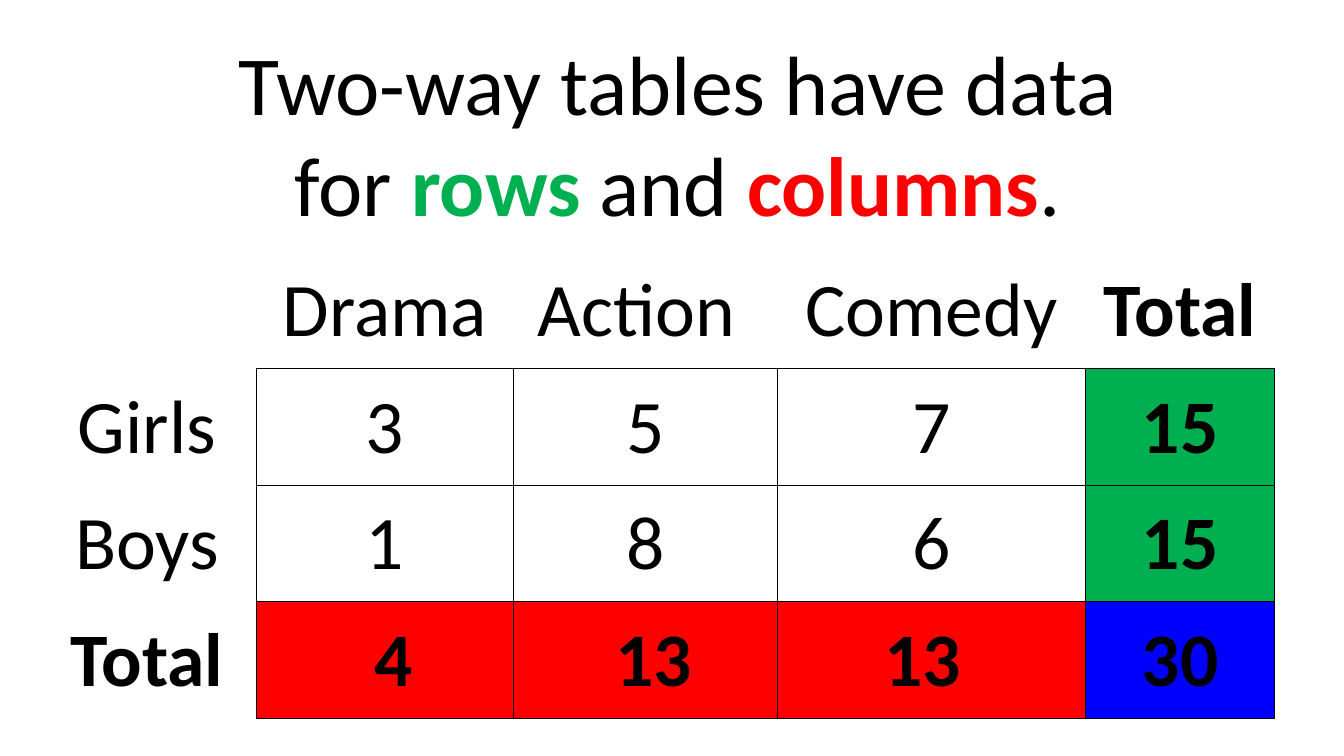
"""Build a slide showing a two-way table of film choices with coloured totals."""
from dataclasses import dataclass

from lxml import etree
from pptx import Presentation
from pptx import util as u
from pptx.dml.color import RGBColor
from pptx.enum import text
from pptx.oxml.ns import qn

PX = 9525
FONT = "Calibri"
BLACK = RGBColor(0x00, 0x00, 0x00)
WHITE = RGBColor(0xFF, 0xFF, 0xFF)
GREEN = RGBColor(0x00, 0xB0, 0x50)
RED = RGBColor(0xFF, 0x00, 0x00)
BLUE = RGBColor(0x00, 0x00, 0xFF)

COLUMN_WIDTHS = [208, 245, 251, 294, 180]
ROW_HEIGHT = 111
COUNTS = [
    ["", "Drama", "Action ", "Comedy", "Total"],
    ["Girls", "3", "5", "7", "15"],
    ["Boys", "1", "8", "6", "15"],
    ["Total", " 4", " 13", "13 ", "30"],
]
LAST_ROW = len(COUNTS) - 1
LAST_COLUMN = len(COLUMN_WIDTHS) - 1


@dataclass(frozen=True)
class Span:
    """A stretch of title text in one style."""

    words: str
    color: RGBColor = BLACK
    bold: bool = False


@dataclass(frozen=True)
class Entry:
    """A table cell with its place in the grid."""

    words: str
    row: int
    column: int

    @property
    def bold(self) -> bool:
        """Tell whether the cell belongs to a total."""
        return self.row == LAST_ROW or self.column == LAST_COLUMN

    @property
    def fill(self) -> RGBColor:
        """Choose the colour for row totals, column totals and the grand total."""
        if not (self.row and self.column and self.bold):
            return WHITE
        if self.row < LAST_ROW:
            return GREEN
        return RED if self.column < LAST_COLUMN else BLUE

    @property
    def edges(self) -> dict[str, bool]:
        """Tell which sides touch the bordered data grid."""
        inside = self.row > 0 and self.column > 0
        return {"a:lnL": inside, "a:lnR": self.row > 0,
                "a:lnT": inside, "a:lnB": self.column > 0}


TITLE = [
    [Span("Two-way tables have data ")],
    [Span("for "), Span("rows", GREEN, True), Span(" and "),
     Span("columns", RED, True), Span(". ")],
]


def px(length: int) -> u.Emu:
    """Turn whole pixels into EMU."""
    return u.Emu(length * PX)


def style(font, size: int, color: RGBColor, bold: bool) -> None:
    """Apply the slide's typeface with a size, colour and weight."""
    font.name, font.size, font.bold = FONT, u.Pt(size), bold
    font.color.rgb = color


def draw_title(page) -> None:
    """Fill and place the title."""
    box = page.shapes.title
    box.left, box.top, box.width, box.height = px(152), px(25), px(1005), px(204)
    frame = box.text_frame
    frame.word_wrap = True
    frame.auto_size = text.MSO_AUTO_SIZE.SHAPE_TO_FIT_TEXT
    frame.vertical_anchor = text.MSO_ANCHOR.TOP
    for index, spans in enumerate(TITLE):
        para = frame.add_paragraph() if index else frame.paragraphs[0]
        para.alignment = text.PP_ALIGN.CENTER
        for span in spans:
            run = para.add_run()
            run.text = span.words
            style(run.font, 60, span.color, span.bold)


def draw_edges(cell, edges: dict[str, bool]) -> None:
    """Give each side of a cell a thin black line or none."""
    properties = cell._tc.get_or_add_tcPr()
    for tag, visible in edges.items():
        line = etree.SubElement(properties, qn(tag), w=str(u.Pt(0.5)))
        if visible:
            fill = etree.SubElement(line, qn("a:solidFill"))
            etree.SubElement(fill, qn("a:srgbClr"), val=str(BLACK))
        else:
            etree.SubElement(line, qn("a:noFill"))


def draw_entry(cell, entry: Entry) -> None:
    """Write and format one table cell."""
    cell.margin_left = cell.margin_right = cell.margin_top = px(1)
    cell.margin_bottom = 0
    cell.vertical_anchor = text.MSO_ANCHOR.MIDDLE
    draw_edges(cell, entry.edges)
    cell.fill.solid()
    cell.fill.fore_color.rgb = entry.fill
    if entry.words:
        para = cell.text_frame.paragraphs[0]
        para.text = entry.words
        para.alignment = text.PP_ALIGN.CENTER
        style(para.runs[0].font, 54, BLACK, entry.bold)


def draw_table(page) -> None:
    """Place the two-way table."""
    table = page.shapes.add_table(
        len(COUNTS), len(COLUMN_WIDTHS), px(36), px(240),
        px(sum(COLUMN_WIDTHS)), px(ROW_HEIGHT * len(COUNTS))).table
    table.first_row = table.horz_banding = False
    for column, width in zip(table.columns, COLUMN_WIDTHS):
        column.width = px(width)
    for row, values in enumerate(COUNTS):
        table.rows[row].height = px(ROW_HEIGHT)
        for column, words in enumerate(values):
            draw_entry(table.cell(row, column), Entry(words, row, column))


def main() -> None:
    """Build and save the deck."""
    deck = Presentation()
    deck.slide_width, deck.slide_height = px(1280), px(720)
    page = deck.slides.add_slide(deck.slide_layouts[5])
    draw_title(page)
    draw_table(page)
    deck.save("out.pptx")


if __name__ == "__main__":
    main()
